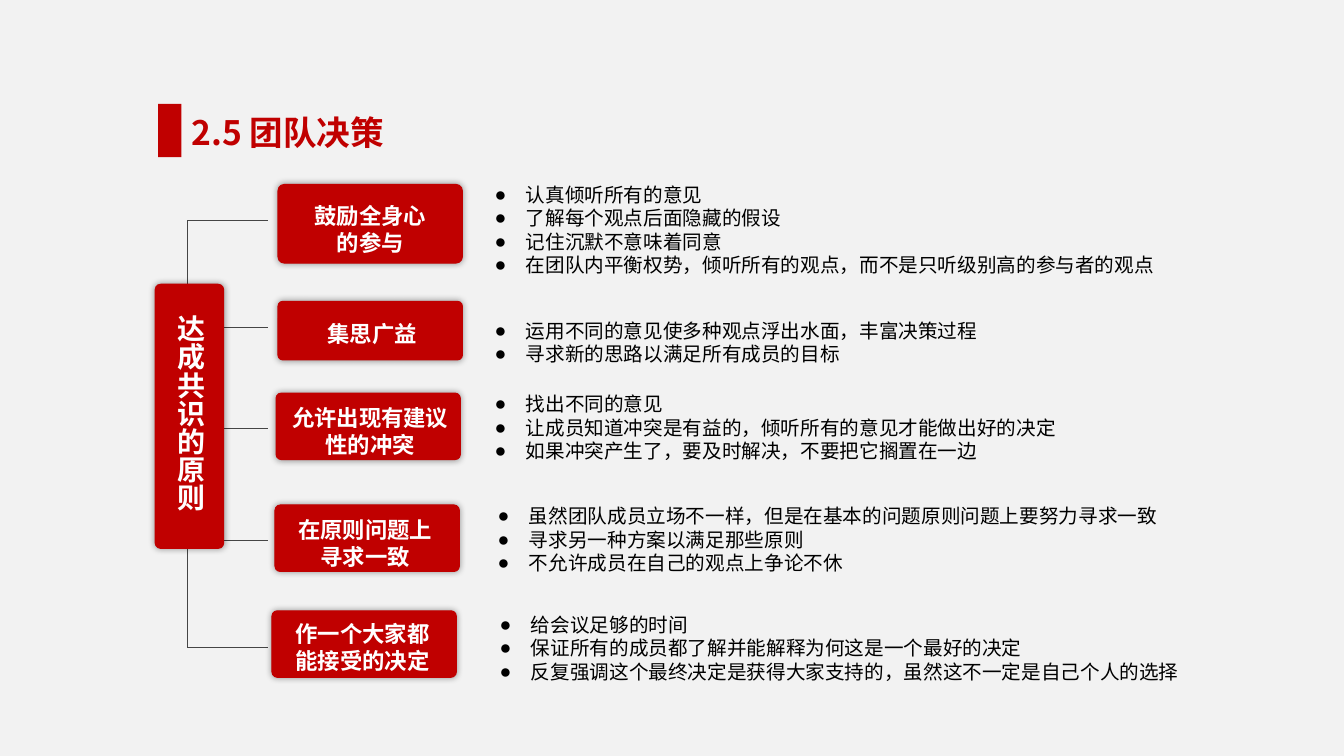
from dataclasses import dataclass

from lxml.etree import SubElement
from pptx import Presentation
from pptx.dml.color import RGBColor
from pptx.enum.shapes import MSO_CONNECTOR as Connector, MSO_SHAPE as Preset
from pptx.enum.text import MSO_ANCHOR as Anchor, MSO_AUTO_SIZE as AutoSize, PP_ALIGN as Align
from pptx.oxml.ns import qn
from pptx.util import Inches, Length, Pt

COLUMNS, ROWS = 133.4, 75
CELL = 0.1


@dataclass(frozen=True)
class Theme:
    font: str = "Noto Sans CJK SC"
    bullet_font: str = "Arial"
    paper: str = "F2F2F2"
    red: str = "C00000"
    ink: str = "000000"
    white: str = "FFFFFF"
    wire: str = "454545"
    title: int = 24
    spine: int = 20
    label: int = 16
    item: int = 14
    line_height: float = 1.2
    outline: float = 0.75


@dataclass(frozen=True)
class Area:
    column: float
    row: float
    width: float
    height: float

    def lengths(self) -> tuple[Length, ...]:
        return tuple(map(cells, (self.column, self.row, self.width, self.height)))


@dataclass(frozen=True)
class Principle:
    label: str
    card: Area
    label_area: Area
    branch_row: float
    list_column: float
    list_row: float
    items: tuple[str, ...]


THEME = Theme()
CARD_WIDTH = 18.3
LIST_WIDTH = 84.8
TRUNK_COLUMN, BRANCH_END = 18.6, 26.6

PRINCIPLES = (
    Principle("鼓励全身心的参与", Area(27.6, 18.3, CARD_WIDTH, 7.8), Area(29.8, 19.6, 13.9, 6.3),
              21.9, 48.1, 17.4,
              ("认真倾听所有的意见", "了解每个观点后面隐藏的假设", "记住沉默不意味着同意",
               "在团队内平衡权势，倾听所有的观点，而不是只听级别高的参与者的观点")),
    Principle("集思广益", Area(27.6, 29.9, CARD_WIDTH, 5.8), Area(28.9, 31.3, 16.1, 3.7),
              32.5, 48.1, 30.9,
              ("运用不同的意见使多种观点浮出水面，丰富决策过程", "寻求新的思路以满足所有成员的目标")),
    Principle("允许出现有建议性的冲突", Area(27.4, 39, CARD_WIDTH, 6.6), Area(27.3, 39.6, 18.9, 6.3),
              42.5, 48.1, 38.2,
              ("找出不同的意见", "让成员知道冲突是有益的，倾听所有的意见才能做出好的决定",
               "如果冲突产生了，要及时解决，不要把它搁置在一边")),
    Principle("在原则问题上寻求一致", Area(27.3, 50.1, CARD_WIDTH, 6.6), Area(28, 50.7, 16.5, 6.3),
              53.6, 48.4, 49.3,
              ("虽然团队成员立场不一样，但是在基本的问题原则问题上要努力寻求一致",
               "寻求另一种方案以满足那些原则", "不允许成员在自己的观点上争论不休")),
    Principle("作一个大家都能接受的决定", Area(27, 60.6, CARD_WIDTH, 6.6), Area(27.5, 61, 17, 6.3),
              64.2, 48.6, 60.1,
              ("给会议足够的时间", "保证所有的成员都了解并能解释为何这是一个最好的决定",
               "反复强调这个最终决定是获得大家支持的，虽然这不一定是自己个人的选择")),
)


def cells(count: float) -> Length:
    return Inches(count * CELL)


def place(shape, area: Area) -> None:
    shape.left, shape.top, shape.width, shape.height = area.lengths()


def add_bullet(paragraph) -> None:
    properties = paragraph._p.get_or_add_pPr()
    indent = cells(3.1)
    properties.set("marL", str(indent))
    properties.set("indent", str(-indent))
    SubElement(properties, qn("a:buFont"), typeface=THEME.bullet_font)
    SubElement(properties, qn("a:buChar"), char="●")


def write(shape, *lines: str, size: int, color: str, bold: bool = False, align: Align = Align.LEFT,
          bullets: bool = False, vertical: bool = False, top: float = 0.5, right: float = 1) -> None:
    frame = shape.text_frame
    frame.word_wrap = True
    frame.auto_size = AutoSize.NONE
    frame.vertical_anchor = Anchor.TOP
    frame.margin_left, frame.margin_right = cells(1), cells(right)
    frame.margin_top, frame.margin_bottom = cells(top), cells(0.5)
    if vertical:
        frame._txBody.bodyPr.set("vert", "eaVert")
    for index, line in enumerate(lines):
        paragraph = frame.add_paragraph() if index else frame.paragraphs[0]
        if bullets:
            add_bullet(paragraph)
        paragraph.alignment = align
        paragraph.space_before = paragraph.space_after = Pt(0)
        paragraph.line_spacing = Pt(size * THEME.line_height)
        run = paragraph.add_run()
        run.text = line
        run.font.name, run.font.size, run.font.bold = THEME.font, Pt(size), bold
        run.font.color.rgb = RGBColor.from_string(color)
        SubElement(run._r.get_or_add_rPr(), qn("a:ea"), typeface=THEME.font)


def add_block(slide, area: Area, preset: Preset):
    block = slide.shapes.add_shape(preset, *area.lengths())
    block.shadow.inherit = False
    block.fill.solid()
    block.fill.fore_color.rgb = RGBColor.from_string(THEME.red)
    block.line.fill.background()
    return block


def add_card(slide, area: Area) -> None:
    card = add_block(slide, area, Preset.ROUNDED_RECTANGLE)
    card.adjustments[0] = 0.08
    card.line.color.rgb = RGBColor.from_string(THEME.red)
    card.line.width = Pt(THEME.outline)
    effects = card._element.spPr.find(qn("a:effectLst"))
    glow = SubElement(effects, qn("a:outerShdw"), blurRad=str(Pt(5)), dist="0", dir="0",
                      algn="ctr", rotWithShape="0")
    black = SubElement(glow, qn("a:srgbClr"), val=THEME.ink)
    SubElement(black, qn("a:alpha"), val="40000")


def add_wire(slide, column: float, row: float, end_column: float, end_row: float) -> None:
    wire = slide.shapes.add_connector(Connector.STRAIGHT, *map(cells, (column, row, end_column, end_row)))
    wire.line.color.rgb = RGBColor.from_string(THEME.wire)
    wire.line.width = Pt(THEME.outline)
    SubElement(wire._element.spPr, qn("a:effectLst"))


def add_label(slide, text: str, area: Area, size: int, **options) -> None:
    label = slide.shapes.add_textbox(*area.lengths())
    write(label, text, size=size, color=THEME.white, bold=True, align=Align.CENTER, **options)


def fill_list(body, principle: Principle) -> None:
    height = len(principle.items) * THEME.item * THEME.line_height / 72 / CELL + 1
    place(body, Area(principle.list_column, principle.list_row, LIST_WIDTH, round(height, 1)))
    write(body, *principle.items, size=THEME.item, color=THEME.ink, align=Align.JUSTIFY,
          bullets=True, top=0.7)


def main() -> None:
    deck = Presentation()
    deck.slide_width, deck.slide_height = cells(COLUMNS), cells(ROWS)
    layout = deck.slide_layouts[1]
    slide = deck.slides.add_slide(layout)
    slide.background.fill.solid()
    slide.background.fill.fore_color.rgb = RGBColor.from_string(THEME.paper)

    heading = slide.shapes.title
    place(heading, Area(18, 10.3, 51.2, 5))
    write(heading, "2.5 团队决策", size=THEME.title, color=THEME.red, bold=True, top=0.8)
    add_block(slide, Area(15.7, 10.3, 2.3, 5.3), Preset.RECTANGLE)

    for _ in PRINCIPLES[1:]:
        slide.shapes.clone_placeholder(layout.placeholders[1])
    bodies = [holder for holder in slide.placeholders if holder.placeholder_format.idx == 1]
    for body, principle in zip(bodies, PRINCIPLES):
        fill_list(body, principle)

    add_wire(slide, TRUNK_COLUMN, PRINCIPLES[0].branch_row, TRUNK_COLUMN, PRINCIPLES[-1].branch_row)
    for principle in PRINCIPLES:
        add_wire(slide, TRUNK_COLUMN, principle.branch_row, BRANCH_END, principle.branch_row)
        add_card(slide, principle.card)
        add_label(slide, principle.label, principle.label_area, THEME.label)

    add_card(slide, Area(15.4, 28.2, 6.8, 26.2))
    add_label(slide, "达成共识的原则", Area(16, 30.3, 5.3, 21.9), THEME.spine, vertical=True, right=0.7)
    deck.save("out.pptx")


if __name__ == "__main__":
    main()
